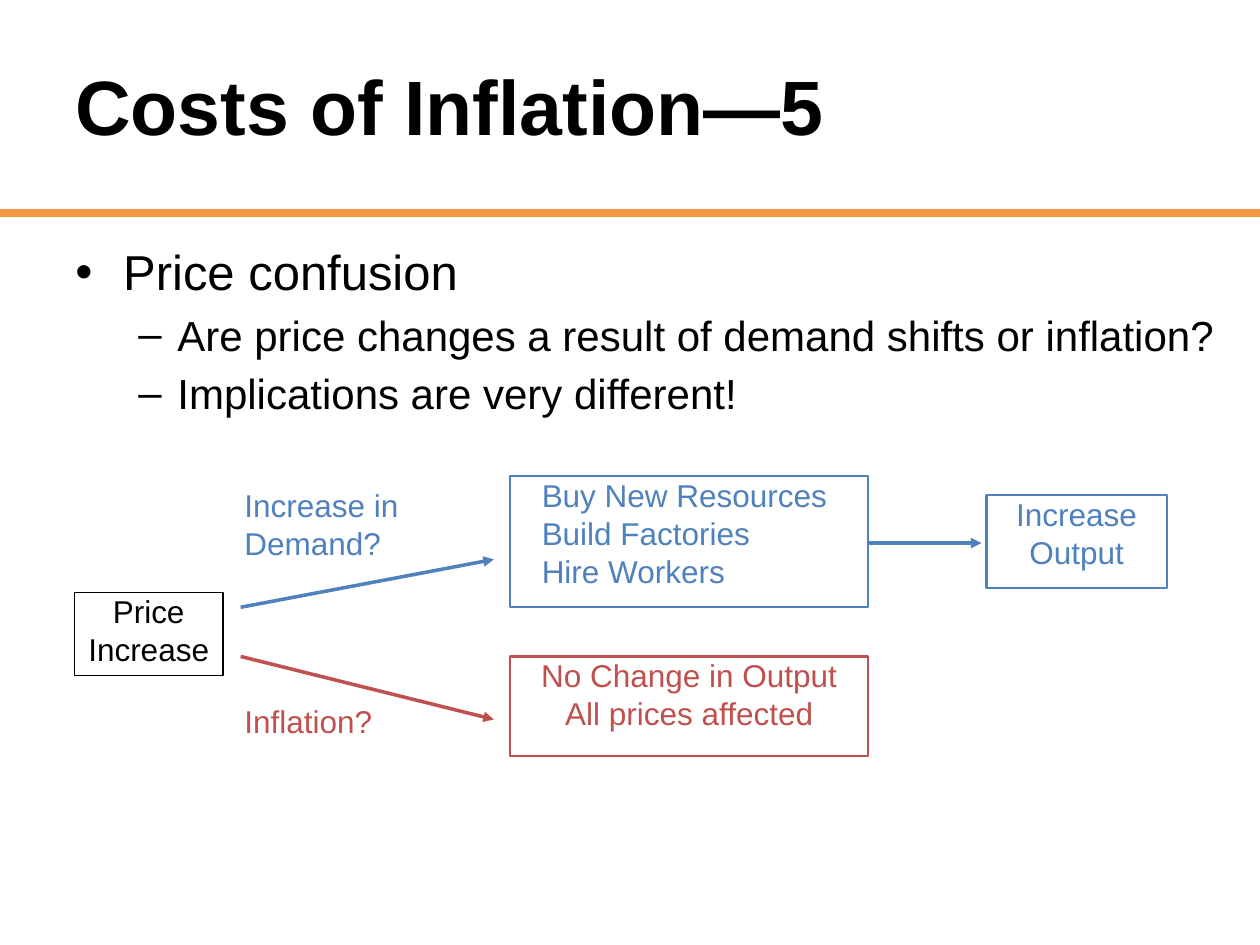
from lxml import etree
from pptx import Presentation
from pptx import util as u
from pptx.dml.color import RGBColor
from pptx.enum import shapes, text
from pptx.oxml.ns import qn

COLORS = {"black": "000000", "white": "FFFFFF", "orange": "F79646",
          "blue": "4F81BD", "red": "C0504D"}
FONT = "Arial"
LEFT, CENTER = text.PP_ALIGN.LEFT, text.PP_ALIGN.CENTER


def rgb(name):
    return RGBColor.from_string(COLORS[name])


def add_run(p, words, size, color="black", bold=False):
    r = p.add_run()
    r.text = words
    r.font.name, r.font.size, r.font.bold = FONT, u.Pt(size), bold
    r.font.color.rgb = rgb(color)


def paragraphs(tf, count):
    return [tf.paragraphs[0]] + [tf.add_paragraph() for _ in range(count - 1)]


def set_indent(p, margin, first):
    pPr = p._p.get_or_add_pPr()
    pPr.set("marL", str(u.Inches(margin)))
    pPr.set("indent", str(u.Inches(first)))
    return pPr


def add_textbox(s, left, top, width, height):
    tf = s.shapes.add_textbox(*map(u.Inches, (left, top, width, height))).text_frame
    tf.word_wrap = True
    return tf


def add_line(s, start, end, color, weight, arrow=False):
    ends = map(u.Inches, (*start, *end))
    line = s.shapes.add_connector(shapes.MSO_CONNECTOR.STRAIGHT, *ends)
    line.line.color.rgb = rgb(color)
    line.line.width = u.Pt(weight)
    if arrow:
        etree.SubElement(line.line._ln, qn("a:tailEnd"), type="triangle")
    etree.SubElement(line._element.spPr, qn("a:effectLst"))


def write_label(tf, lines, color, align=LEFT, first_indent=0):
    """Fill a diagram box or caption, without insets, from the top."""
    tf.word_wrap = True
    tf.vertical_anchor = text.MSO_ANCHOR.TOP
    tf.margin_left = tf.margin_right = tf.margin_top = tf.margin_bottom = 0
    for p, words in zip(paragraphs(tf, len(lines)), lines):
        p.alignment = align
        if first_indent:
            set_indent(p, 0, first_indent)
        add_run(p, words, 18, color)


def add_title(s, left, top, width, height):
    tf = add_textbox(s, left, top, width, height)
    tf.vertical_anchor = text.MSO_ANCHOR.MIDDLE
    add_run(tf.paragraphs[0], "Costs of Inflation—5", 44, bold=True)


def add_bullets(s, left, top, width, height):
    # level: bullet, left margin, hanging indent, size
    levels = [("•", 0.38, -0.38, 28), ("–", 0.81, -0.31, 24)]
    items = [(0, "Price confusion"),
             (1, "Are price changes a result of demand shifts or inflation?"),
             (1, "Implications are very different!")]
    tf = add_textbox(s, left, top, width, height)
    for p, (level, words) in zip(paragraphs(tf, len(items)), items):
        bullet, margin, hanging, size = levels[level]
        p.level = level
        pPr = set_indent(p, margin, hanging)
        before = etree.SubElement(pPr, qn("a:spcBef"))
        etree.SubElement(before, qn("a:spcPct"), val="20000")
        etree.SubElement(pPr, qn("a:buFont"), typeface=FONT)
        etree.SubElement(pPr, qn("a:buChar"), char=bullet)
        add_run(p, words, size)


def add_flow(s, left, top):
    """Price increase leading to its two possible causes and their results."""
    boxes = [
        (0, 0.92, 1.18, 0.66, "black", 0.75, ["Price", "Increase"], CENTER, 0),
        (3.46, 1.43, 2.84, 0.79, "red", 1.25,
         ["No Change in Output", "All prices affected"], CENTER, 0),
        (3.46, 0, 2.84, 1.04, "blue", 1.25,
         ["Buy New Resources", "Build Factories", "Hire Workers"], LEFT, 0.25),
        (7.24, 0.15, 1.43, 0.74, "blue", 1.25, ["Increase Output"], CENTER, 0),
    ]
    arrows = [((1.32, 1.04), (3.33, 0.66), "blue"),
              ((6.29, 0.53), (7.2, 0.53), "blue"),
              ((1.32, 1.43), (3.33, 1.93), "red")]
    captions = [(1.35, 0.08, 1.59, 0.64, "blue", "Increase in Demand?"),
                (1.35, 1.79, 1.24, 0.31, "red", "Inflation?")]

    for x, y, w, h, color, weight, lines, align, first_indent in boxes:
        sp = s.shapes.add_shape(shapes.MSO_SHAPE.RECTANGLE,
                                *map(u.Inches, (left + x, top + y, w, h)))
        sp.shadow.inherit = False
        sp.fill.solid()
        sp.fill.fore_color.rgb = rgb("white")
        sp.line.color.rgb = rgb(color)
        sp.line.width = u.Pt(weight)
        write_label(sp.text_frame, lines, color, align, first_indent)
    for (x1, y1), (x2, y2), color in arrows:
        add_line(s, (left + x1, top + y1), (left + x2, top + y2), color, 2, arrow=True)
    for x, y, w, h, color, words in captions:
        write_label(add_textbox(s, left + x, top + y, w, h), [words], color)


def main():
    prs = Presentation()
    prs.slide_width, prs.slide_height = u.Inches(10), u.Inches(7.5)
    s = prs.slides.add_slide(prs.slide_layouts[6])
    add_line(s, (0, 1.69), (10, 1.69), "orange", 4.5)
    add_title(s, 0.5, 0, 9, 1.67)
    add_bullets(s, 0.5, 1.87, 9.5, 5.35)
    add_flow(s, 0.59, 3.78)
    prs.save("out.pptx")


if __name__ == "__main__":
    main()
